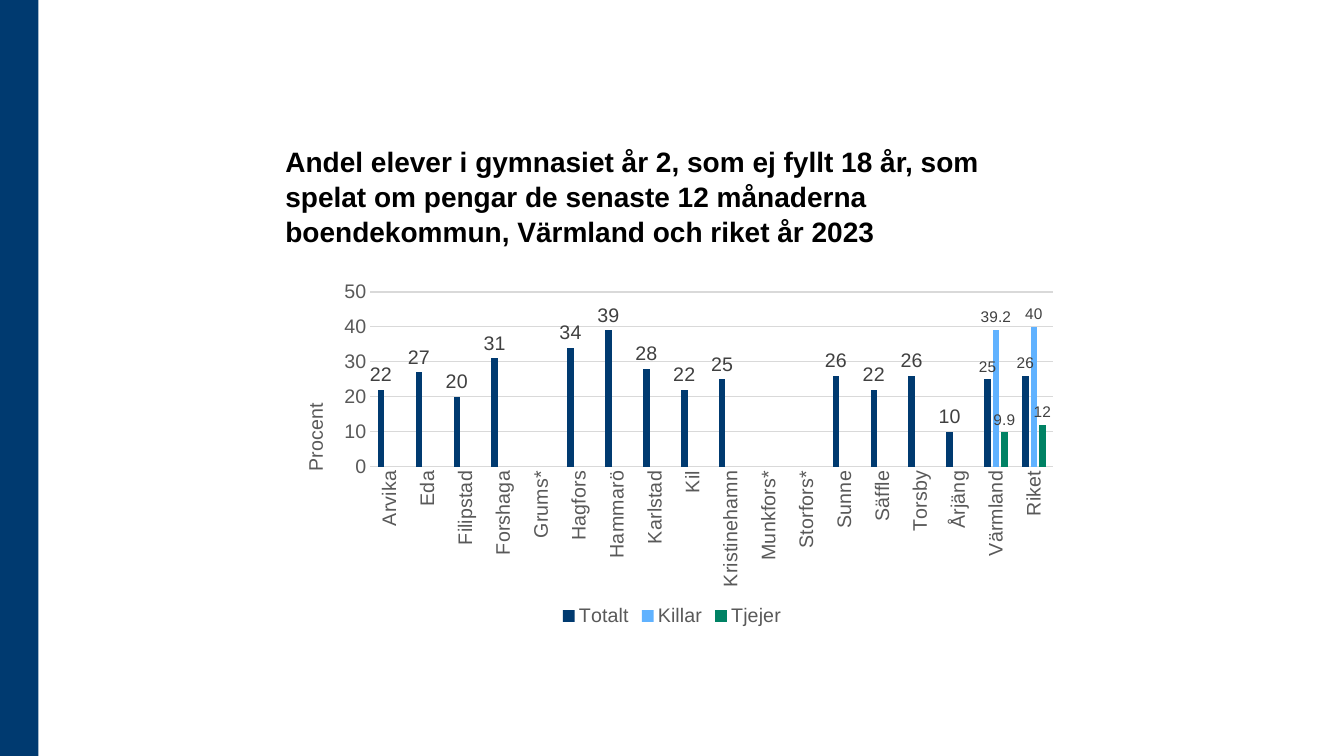
from lxml import etree
from pptx import Presentation
from pptx.chart.data import CategoryChartData
from pptx.dml.color import RGBColor
from pptx.enum.chart import XL_CHART_TYPE, XL_LABEL_POSITION, XL_LEGEND_POSITION, XL_TICK_MARK
from pptx.enum.shapes import MSO_SHAPE
from pptx.enum.text import MSO_ANCHOR, PP_ALIGN
from pptx.oxml import parse_xml
from pptx.oxml.ns import nsdecls, qn
from pptx.util import Inches, Pt

COLUMNS = XL_CHART_TYPE.COLUMN_CLUSTERED
OUTSIDE_END = XL_LABEL_POSITION.OUTSIDE_END
LEGEND_BOTTOM = XL_LEGEND_POSITION.BOTTOM
NO_TICK = XL_TICK_MARK.NONE
FONT = "Arial"
COLORS = {
    "navy": "003A70", "sky": "60B2FF", "green": "008264", "title": "000000",
    "axis": "595959", "label": "404040", "grid": "D9D9D9",
}

TITLE = ("Andel elever i gymnasiet år 2, som ej fyllt 18 år, som spelat om pengar "
         "de senaste 12 månaderna boendekommun, Värmland och riket år 2023")
AXIS_TITLE = "Procent"
TOTALS = {
    "Arvika": 22, "Eda": 27, "Filipstad": 20, "Forshaga": 31, "Grums*": None,
    "Hagfors": 34, "Hammarö": 39, "Karlstad": 28, "Kil": 22, "Kristinehamn": 25,
    "Munkfors*": None, "Storfors*": None, "Sunne": 26, "Säffle": 22,
    "Torsby": 26, "Årjäng": 10, "Värmland": 25, "Riket": 26,
}
BOYS = {"Värmland": 39.2, "Riket": 40}
GIRLS = {"Värmland": 9.9, "Riket": 12}
SERIES = [
    ("Totalt", TOTALS, "navy", 14),
    ("Killar", BOYS, "sky", 11),
    ("Tjejer", GIRLS, "green", 11),
]
LEFT, WIDTH = 2.73, 7.87
PLOT_AREA = {"x": 0.12, "y": 0.05, "w": 0.86, "h": 0.49}
AXIS_TITLE_PLACE = {"x": 0.03, "y": 0.35}


def rgb(name):
    return RGBColor.from_string(COLORS[name])


def style_font(font, size, color, bold=False):
    font.name, font.size, font.bold = FONT, Pt(size), bold
    font.color.rgb = rgb(color)


def set_layout(parent, place, before, inner=False):
    for old in parent.findall(qn("c:layout")):
        parent.remove(old)
    layout = parse_xml(f"<c:layout {nsdecls('c')}><c:manualLayout/></c:layout>")
    manual = layout[0]
    settings = {"layoutTarget": "inner"} if inner else {}
    settings |= {f"{key}Mode": "edge" for key in ("x", "y")} | place
    for tag, value in settings.items():
        etree.SubElement(manual, qn(f"c:{tag}")).set("val", str(value))
    parent.find(qn(before)).addprevious(layout)


def add_title(page):
    title = page.shapes.title
    title.left, title.top = Inches(LEFT), Inches(1.06)
    title.width, title.height = Inches(WIDTH), Inches(1.45)
    frame = title.text_frame
    frame.text = TITLE
    frame.word_wrap = True
    frame.vertical_anchor = MSO_ANCHOR.BOTTOM
    para = frame.paragraphs[0]
    para.alignment = PP_ALIGN.LEFT
    para.line_spacing = 1.04
    style_font(para.font, 20, "title", True)


def add_sidebar(page):
    bar = page.shapes.add_shape(MSO_SHAPE.RECTANGLE, 0, 0, Inches(0.38), Inches(7.5))
    bar.shadow.inherit = False
    bar.fill.solid()
    bar.fill.fore_color.rgb = rgb("navy")
    bar.line.fill.background()


def style_axes(chart):
    for axis in (chart.category_axis, chart.value_axis):
        axis.major_tick_mark = axis.minor_tick_mark = NO_TICK
        style_font(axis.tick_labels.font, 14, "axis")

    places = chart.category_axis
    places.format.line.color.rgb = rgb("grid")
    places.format.line.width = Pt(0.75)
    places._element.find(qn("c:txPr")).find(qn("a:bodyPr")).set("rot", "-5400000")

    percent = chart.value_axis
    percent.minimum_scale, percent.maximum_scale, percent.major_unit = 0, 50, 10
    percent.format.line.fill.background()
    percent.major_gridlines.format.line.color.rgb = rgb("grid")
    percent.major_gridlines.format.line.width = Pt(0.75)
    percent.tick_labels.number_format = "0"
    percent.tick_labels.number_format_is_linked = False

    frame = percent.axis_title.text_frame
    frame.text = AXIS_TITLE
    style_font(frame.paragraphs[0].font, 14, "axis")
    frame._txBody.find(qn("a:bodyPr")).set("rot", "-5400000")
    set_layout(percent.axis_title._element, AXIS_TITLE_PLACE, "c:overlay")


def style_series(plot):
    plot.gap_width, plot.overlap, plot.vary_by_categories = 219, -27, False
    for series, (_, values, color, size) in zip(plot.series, SERIES):
        series.format.fill.solid()
        series.format.fill.fore_color.rgb = rgb(color)
        series.invert_if_negative = False
        labels = series.data_labels
        labels.show_value = True
        labels.position = OUTSIDE_END
        labels.number_format = "0" if values is TOTALS else "General"
        labels.number_format_is_linked = False
        style_font(labels.font, size, "label")

    names = list(TOTALS)
    for name in BOYS:
        label = plot.series[0].points[names.index(name)].data_label
        style_font(label.font, 11, "label")
        label.position = OUTSIDE_END


def add_gambling_chart(page):
    data = CategoryChartData()
    data.categories = list(TOTALS)
    for name, values, _, _ in SERIES:
        data.add_series(name, [values.get(place) for place in TOTALS])
    chart = page.shapes.add_chart(
        COLUMNS, Inches(LEFT), Inches(2.72), Inches(WIDTH), Inches(3.54), data).chart
    chart.has_title = False
    style_font(chart.font, 14, "title")
    style_axes(chart)
    style_series(chart.plots[0])
    plot_area = chart._chartSpace.chart.plotArea
    set_layout(plot_area, PLOT_AREA, "c:barChart", inner=True)
    chart.has_legend = True
    chart.legend.position = LEGEND_BOTTOM
    chart.legend.include_in_layout = False
    style_font(chart.legend.font, 14, "axis")


def main():
    deck = Presentation()
    deck.slide_width, deck.slide_height = Inches(13.33), Inches(7.5)
    page = deck.slides.add_slide(deck.slide_layouts[5])
    add_sidebar(page)
    add_title(page)
    add_gambling_chart(page)
    deck.save("out.pptx")


if __name__ == "__main__":
    main()
